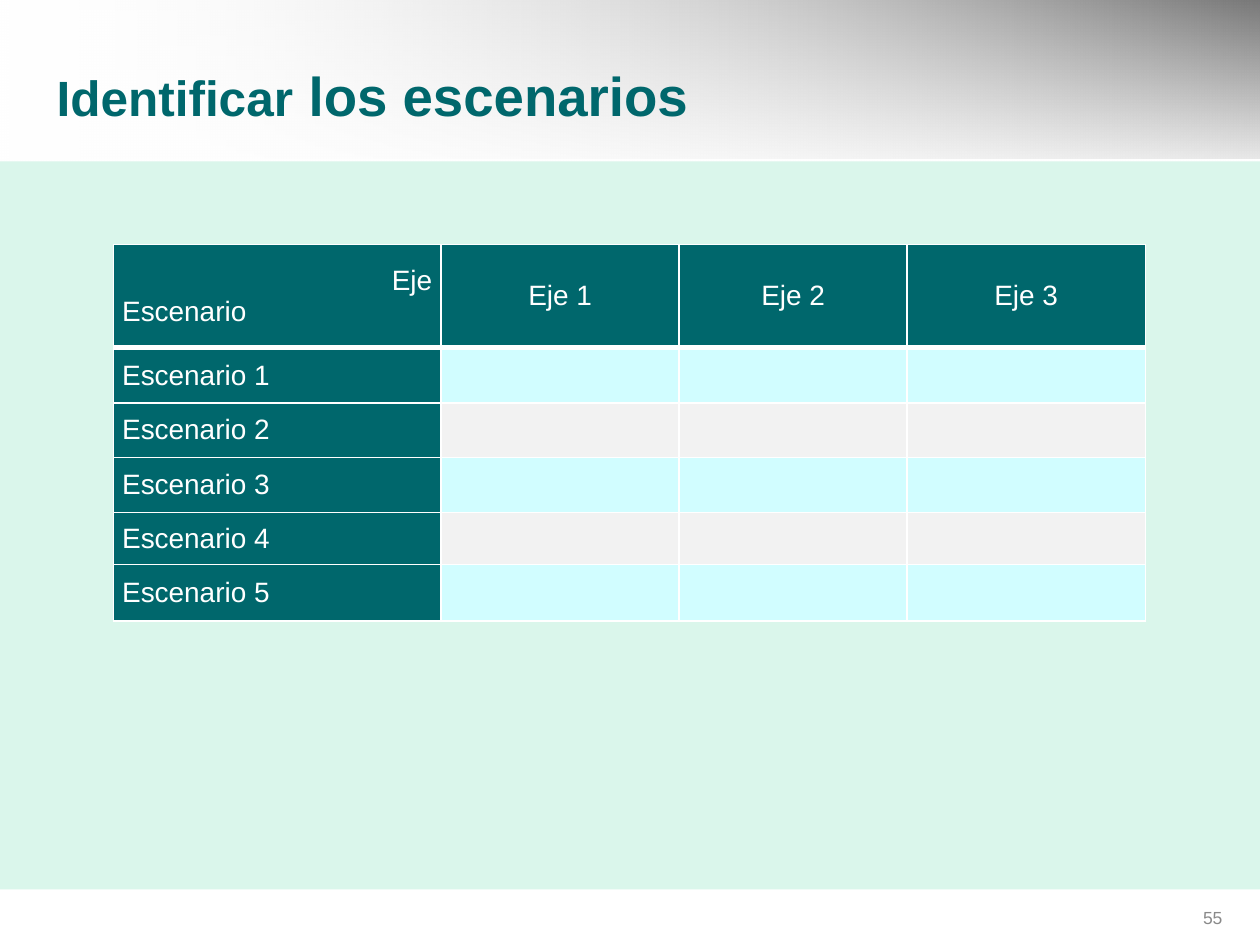
import pptx
import pptx.dml.color
import pptx.enum.shapes
import pptx.enum.text
import pptx.oxml
import pptx.oxml.ns
import pptx.util

Pt = pptx.util.Pt
RGBColor = pptx.dml.color.RGBColor
ALIGN = pptx.enum.text.PP_ALIGN
MIDDLE = pptx.enum.text.MSO_ANCHOR.MIDDLE

TEAL = RGBColor(0x00, 0x67, 0x6C)
MINT = RGBColor(0xDA, 0xF6, 0xEB)
CYAN = RGBColor(0xD1, 0xFD, 0xFF)
LIGHT_GRAY = RGBColor(0xF2, 0xF2, 0xF2)
GRAY = RGBColor(0x89, 0x89, 0x89)
WHITE = RGBColor(0xFF, 0xFF, 0xFF)
BLACK = RGBColor(0x00, 0x00, 0x00)


def add_text(paragraph, text, size=16, color=WHITE, bold=False, align=ALIGN.LEFT):
    paragraph.alignment = align
    run = paragraph.add_run()
    run.text = text
    run.font.name = "Arial"
    run.font.size = Pt(size)
    run.font.bold = bold
    run.font.color.rgb = color


def add_band(top, height):
    band = slide.shapes.add_shape(
        pptx.enum.shapes.MSO_SHAPE.RECTANGLE, Pt(0), Pt(top), Pt(720), Pt(height))
    band.shadow.inherit = False
    band.line.fill.background()
    return band


presentation = pptx.Presentation()
presentation.slide_width = Pt(720)
presentation.slide_height = Pt(540)
slide = presentation.slides.add_slide(presentation.slide_layouts[5])

# Header: a horizontal fade to black under a vertical white veil
# Each entry: height, angle, first opacity in percent, last colour
for height, angle, opacity, end_color in [(90.72, 0, 0, BLACK), (108, 90, 47, WHITE)]:
    band = add_band(0, height)
    band.fill.background()
    gradient = pptx.oxml.parse_xml(
        f'<a:gradFill {pptx.oxml.ns.nsdecls("a")} rotWithShape="1"><a:gsLst>'
        f'<a:gs pos="0"><a:srgbClr val="{WHITE}"><a:alpha val="{opacity * 1000}"/></a:srgbClr></a:gs>'
        f'<a:gs pos="100000"><a:srgbClr val="{end_color}"/></a:gs>'
        f'</a:gsLst><a:lin ang="{angle * 60000}" scaled="0"/></a:gradFill>')
    properties = band.element.spPr
    properties.replace(properties.find(pptx.oxml.ns.qn("a:noFill")), gradient)

# Body background
body = add_band(92.16, 416.16)
body.fill.solid()
body.fill.fore_color.rgb = MINT

# Title, brought in front of the bands
title = slide.shapes.title
title.element.getparent().append(title.element)
title.left, title.top, title.width, title.height = Pt(25.2), Pt(31.68), Pt(674.64), Pt(45.36)
title.text_frame.vertical_anchor = MIDDLE
for text, size in [("Identificar", 28.3), (" los escenarios", 31.2)]:
    add_text(title.text_frame.paragraphs[0], text, size=size, color=TEAL, bold=True)

# Page number
number = slide.shapes.add_textbox(Pt(660.24), Pt(514.08), Pt(45.36), Pt(20.88))
number.text_frame.word_wrap = True
number.text_frame.vertical_anchor = MIDDLE
add_text(number.text_frame.paragraphs[0], "55", size=10, color=GRAY, align=ALIGN.RIGHT)

# Scenario table
column_widths = [187.2, 136.08, 130.32, 136.08]
row_heights = [59.04, 31.68, 30.96, 31.68, 29.52, 32.4]
table = slide.shapes.add_table(
    len(row_heights), len(column_widths), Pt(64.8), Pt(139.68),
    Pt(sum(column_widths)), Pt(sum(row_heights))).table
for column, width in zip(table.columns, column_widths):
    column.width = Pt(width)
for row, height in zip(table.rows, row_heights):
    row.height = Pt(height)

for row_index in range(len(row_heights)):
    for column_index in range(len(column_widths)):
        cell = table.cell(row_index, column_index)
        cell.vertical_anchor = MIDDLE
        cell.margin_left = cell.margin_right = Pt(5.04)
        cell.margin_top = cell.margin_bottom = Pt(0)
        cell.fill.solid()
        if row_index == 0 or column_index == 0:
            cell.fill.fore_color.rgb = TEAL
        else:
            cell.fill.fore_color.rgb = CYAN if row_index % 2 else LIGHT_GRAY

        # White borders, heavier under the header row
        cell_properties = cell._tc.get_or_add_tcPr()
        for position, side in enumerate("LRTB"):
            line_width = Pt(3 if row_index == 0 and side == "B" else 1)
            cell_properties.insert(position, pptx.oxml.parse_xml(
                f'<a:ln{side} {pptx.oxml.ns.nsdecls("a")} w="{line_width}"><a:solidFill>'
                f'<a:srgbClr val="{WHITE}"/></a:solidFill></a:ln{side}>'))

        # Labels
        frame = cell.text_frame
        paragraph = frame.paragraphs[0]
        if row_index == 0 and column_index == 0:
            add_text(paragraph, "Eje", align=ALIGN.RIGHT)
            add_text(frame.add_paragraph(), "Escenario", align=ALIGN.JUSTIFY)
        elif row_index == 0:
            add_text(paragraph, f"Eje {column_index}", align=ALIGN.CENTER)
        elif column_index == 0:
            add_text(paragraph, f"Escenario {row_index}", align=ALIGN.JUSTIFY)

presentation.save("out.pptx")
